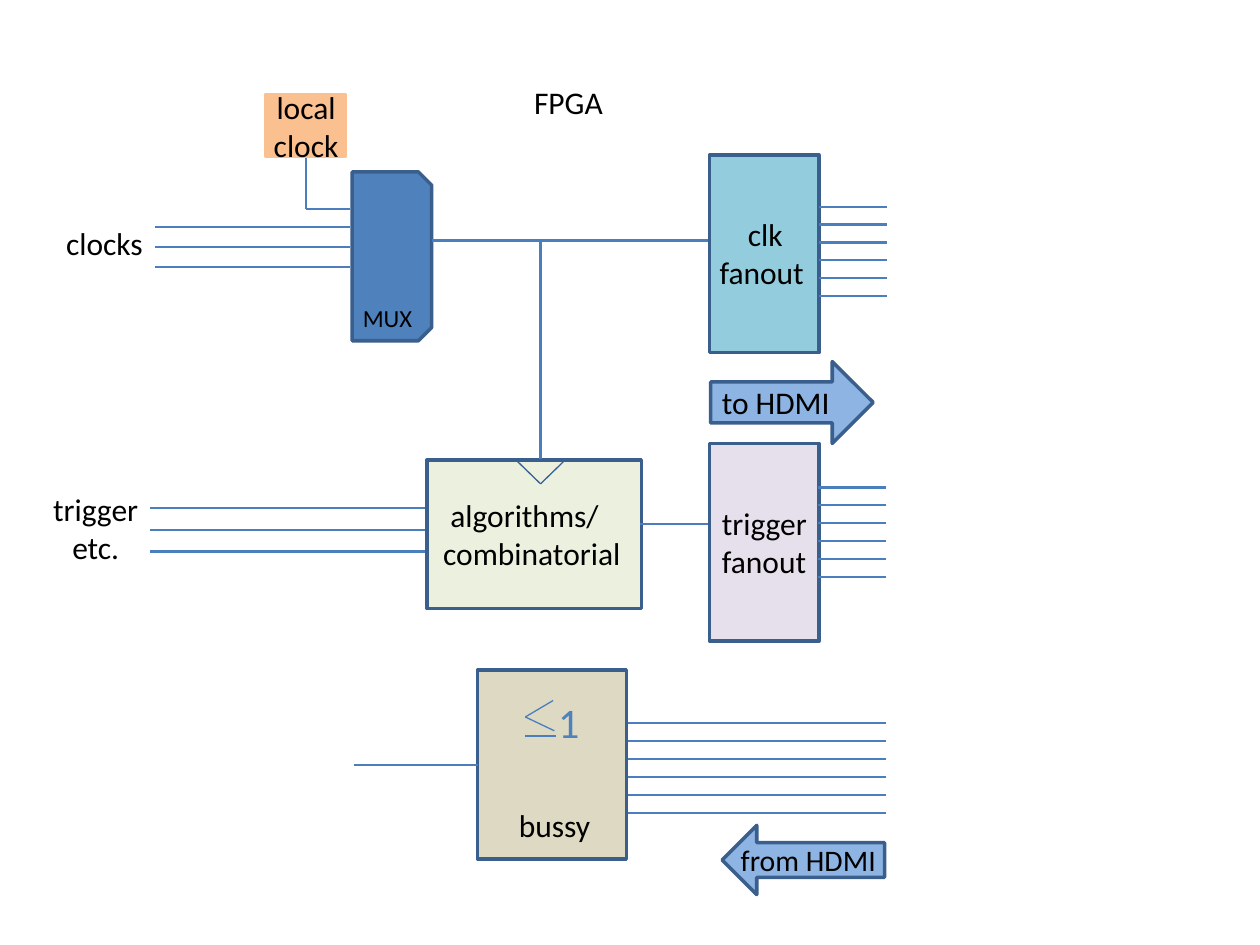
from dataclasses import dataclass

from lxml.etree import SubElement
from pptx import Presentation
from pptx.dml.color import RGBColor
from pptx.enum.shapes import MSO_CONNECTOR as Connector, MSO_SHAPE as Shape
from pptx.enum.text import MSO_AUTO_SIZE as AutoSize, PP_ALIGN as Align
from pptx.oxml.ns import qn
from pptx.util import Pt


@dataclass(frozen=True)
class Theme:
    font: str = "Calibri"
    body: float = 18
    arrow_label: float = 17
    small: float = 14
    symbol: float = 24
    text: str = "000000"
    blue: str = "4F81BD"
    wire: str = "4B7EBC"
    clock_edge: str = "376092"
    outline: str = "3A5F8C"
    local_clock: str = "FAC090"
    clk_fanout: str = "93CDDD"
    trigger_fanout: str = "E6E0EC"
    algorithms: str = "EBF1DE"
    hdmi: str = "8EB4E3"
    bussy: str = "DDD9C3"
    outline_width: float = 2
    wire_width: float = 1.25
    thin_width: float = 0.75


THEME = Theme()
FANOUT_PITCH = 10.22
FANOUT_COUNT = 6


def add_block(slide, kind, box, fill, outline=THEME.outline, rotation=0):
    block = slide.shapes.add_shape(kind, *map(Pt, box))
    block.shadow.inherit = False
    block.rotation = rotation
    block.fill.solid()
    block.fill.fore_color.rgb = RGBColor.from_string(fill)
    block.line.color.rgb = RGBColor.from_string(outline)
    block.line.width = Pt(THEME.outline_width)


def add_label(slide, box, *lines, size=THEME.body, color=THEME.text, align=Align.LEFT):
    frame = slide.shapes.add_textbox(*map(Pt, box)).text_frame
    frame.word_wrap = True
    frame.auto_size = AutoSize.SHAPE_TO_FIT_TEXT
    frame.text = "\n".join(lines)
    for paragraph in frame.paragraphs:
        paragraph.alignment = align
        paragraph.font.name = THEME.font
        paragraph.font.size = Pt(size)
        paragraph.font.color.rgb = RGBColor.from_string(color)


def add_wire(slide, start, end, color=THEME.wire, width=THEME.wire_width):
    wire = slide.shapes.add_connector(Connector.STRAIGHT, *map(Pt, (*start, *end)))
    wire.line.color.rgb = RGBColor.from_string(color)
    wire.line.width = Pt(width)
    SubElement(wire._element.spPr, qn("a:effectLst"))


def add_bus(slide, left, right, top, pitch=FANOUT_PITCH, count=FANOUT_COUNT):
    """Draw evenly spaced horizontal wires."""
    for index in range(count):
        y = top + index * pitch
        add_wire(slide, (left, y), (right, y))


def add_clock_path(slide):
    add_block(slide, Shape.SNIP_2_SAME_RECTANGLE, (175.7, 123.8, 96.5, 45.4),
              THEME.blue, rotation=90)
    add_label(slide, (200.2, 169.9, 46.8, 24.5), "MUX", size=THEME.small)
    add_label(slide, (26.6, 124.6, 85, 29), " clocks")
    add_bus(slide, 88.6, 200.2, 129.8, pitch=11.5, count=3)

    add_block(slide, Shape.RECTANGLE, (151.9, 54, 45.4, 35.3),
              THEME.local_clock, THEME.local_clock)
    add_label(slide, (144, 46.8, 61.9, 51.1), "local clock", align=Align.CENTER)
    add_wire(slide, (174.8, 90), (174.8, 119.5))
    add_wire(slide, (174.8, 119.5), (200.2, 119.5))

    add_wire(slide, (247, 137.5), (405.4, 137.5))
    add_block(slide, Shape.RECTANGLE, (405.4, 88.6, 62.6, 113), THEME.clk_fanout)
    add_label(slide, (402.5, 119.5, 65.5, 51.1), " clk", "fanout", align=Align.CENTER)
    add_bus(slide, 468, 507, 118.1)


def add_trigger_path(slide):
    add_label(slide, (12.2, 276.5, 85, 51.1), "trigger", "etc.", align=Align.CENTER)
    add_bus(slide, 85.7, 243.4, 290.2, pitch=12.5, count=3)

    add_block(slide, Shape.RECTANGLE, (244.1, 262.8, 122.4, 85), THEME.algorithms)
    add_label(slide, (246.2, 280.1, 119.5, 51.1), " algorithms/", "combinatorial")
    add_wire(slide, (308.9, 137.5), (308.9, 262.1))
    for corner_x in (295.2, 322.6):
        add_wire(slide, (corner_x, 263.2), (308.9, 276.5),
                 THEME.clock_edge, THEME.thin_width)

    add_wire(slide, (365.8, 299.5), (405.4, 299.5))
    add_block(slide, Shape.RECTANGLE, (405.4, 253.4, 62.6, 113), THEME.trigger_fanout)
    add_label(slide, (405.4, 262.8, 65.5, 72.7), " trigger", "fanout")
    # The leading line space of this label is part of its vertical placement.
    add_bus(slide, 467.5, 506.5, 278.6)


def add_bussy_path(slide):
    add_block(slide, Shape.RECTANGLE, (272.9, 383, 85, 108), THEME.bussy)
    less_or_equal = (
        ((316.1, 400.3), (300.2, 409.7)),
        ((316.8, 417.6), (300.2, 409.7)),
        ((317.5, 420.5), (300.2, 420.5)),
    )
    for start, end in less_or_equal:
        add_wire(slide, start, end, width=THEME.thin_width)
    add_label(slide, (311.8, 394.6, 28.1, 36), "1", size=THEME.symbol, color=THEME.blue)
    add_label(slide, (289.4, 457.2, 72.7, 29), "bussy")
    add_bus(slide, 358.6, 506.2, 413.3)
    add_wire(slide, (202.3, 437), (272.9, 437))


def add_hdmi_arrows(slide):
    add_block(slide, Shape.RIGHT_ARROW, (406.1, 206.6, 92.9, 46.8), THEME.hdmi)
    add_label(slide, (405.4, 215.3, 132.5, 29), "to HDMI")
    add_block(slide, Shape.RIGHT_ARROW, (412.6, 471.6, 92.9, 39.6), THEME.hdmi,
              rotation=180)
    add_label(slide, (416.2, 477.4, 103, 28.1), "from HDMI", size=THEME.arrow_label)


def main():
    deck = Presentation()
    deck.slide_width, deck.slide_height = Pt(720), Pt(540)
    slide = deck.slides.add_slide(deck.slide_layouts[6])
    add_label(slide, (298.1, 43.9, 73.4, 29), "FPGA")
    add_clock_path(slide)
    add_trigger_path(slide)
    add_bussy_path(slide)
    add_hdmi_arrows(slide)
    deck.save("out.pptx")


if __name__ == "__main__":
    main()
